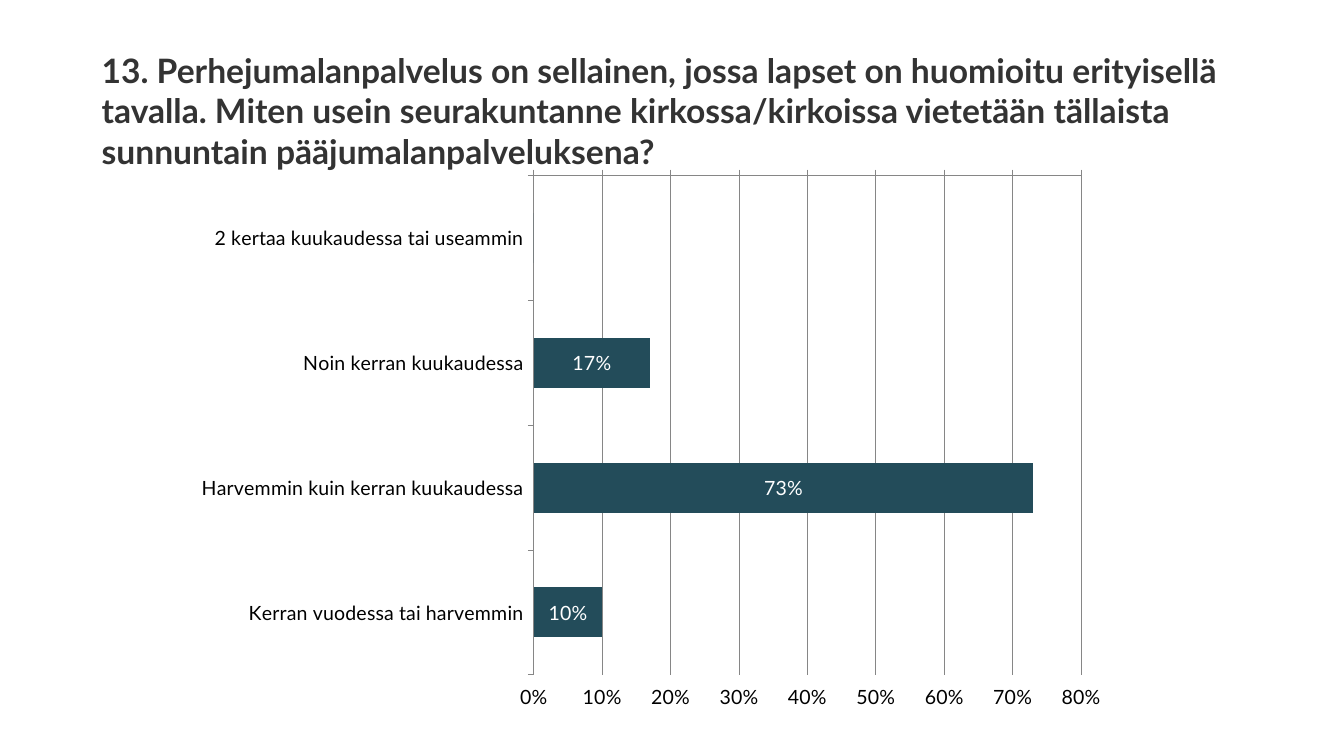
from lxml.etree import SubElement
from pptx import Presentation
from pptx.chart.data import CategoryChartData
from pptx.dml.color import RGBColor
from pptx.enum.chart import XL_CHART_TYPE, XL_LABEL_POSITION, XL_TICK_LABEL_POSITION, XL_TICK_MARK
from pptx.enum.text import MSO_ANCHOR
from pptx.oxml.ns import qn
from pptx.util import Inches, Pt

FONT = "Lato"
HEADING = RGBColor(0x33, 0x33, 0x33)
BLACK = RGBColor(0, 0, 0)
WHITE = RGBColor(0xFF, 0xFF, 0xFF)
TEAL = RGBColor(0x23, 0x4C, 0x5A)
GRID = RGBColor(0x86, 0x86, 0x86)

ANSWERS = {
    "2 kertaa kuukaudessa tai useammin": 0,
    "Noin kerran kuukaudessa": 0.17,
    "Harvemmin kuin kerran kuukaudessa": 0.73,
    "Kerran vuodessa tai harvemmin": 0.1,
}

prs = Presentation()
prs.slide_width, prs.slide_height = Inches(13.33), Inches(7.5)
slide = prs.slides.add_slide(prs.slide_layouts[6])

# Question
question = slide.shapes.add_textbox(Inches(0.91), Inches(0.44), Inches(11.34), Inches(1.31)).text_frame
question.word_wrap = True
question.vertical_anchor = MSO_ANCHOR.MIDDLE
question.text = (
    "13. Perhejumalanpalvelus on sellainen, jossa lapset on huomioitu erityisellä tavalla. "
    "Miten usein seurakuntanne kirkossa/kirkoissa vietetään tällaista "
    "sunnuntain pääjumalanpalveluksena?"
)
heading_font = question.paragraphs[0].font
heading_font.name, heading_font.size, heading_font.bold = FONT, Pt(24), True
heading_font.color.rgb = HEADING

# Share of each answer
shares = CategoryChartData(number_format="0%")
shares.categories = list(ANSWERS)
shares.add_series("Series 1", list(ANSWERS.values()))
chart = slide.shapes.add_chart(
    XL_CHART_TYPE.BAR_CLUSTERED, Inches(2), Inches(1.52), Inches(9.03), Inches(5.56), shares
).chart
chart.has_title = chart.has_legend = False
chart.font.name, chart.font.size = FONT, Pt(14)
chart.font.color.rgb = BLACK

# Bars and labels; the number format hides the zero
bars = chart.plots[0]
bars.gap_width = 150
bars.vary_by_categories = False
bars.series[0].format.fill.solid()
bars.series[0].format.fill.fore_color.rgb = TEAL
bars.has_data_labels = True
labels = bars.data_labels
labels.show_value = True
labels.number_format, labels.number_format_is_linked = "0%;;", False
labels.position = XL_LABEL_POSITION.CENTER
labels.font.name, labels.font.size = FONT, Pt(14)
labels.font.color.rgb = WHITE

# Axes: answers run downwards, percentages stay at the bottom
answer_axis, share_axis = chart.category_axis, chart.value_axis
answer_axis.reverse_order = True
answer_axis.tick_label_position = XL_TICK_LABEL_POSITION.LOW
share_axis.tick_label_position = XL_TICK_LABEL_POSITION.HIGH
share_axis.minimum_scale, share_axis.maximum_scale, share_axis.major_unit = 0, 0.8, 0.1
share_axis.tick_labels.number_format = "0%"
share_axis.tick_labels.number_format_is_linked = False
share_axis.has_major_gridlines = True
for axis in (answer_axis, share_axis):
    axis.major_tick_mark = XL_TICK_MARK.OUTSIDE
    axis.minor_tick_mark = XL_TICK_MARK.NONE
for line in (answer_axis.format.line, share_axis.format.line, share_axis.major_gridlines.format.line):
    line.color.rgb = GRID
    line.width = Pt(0.75)

# Inner plot area as shares of the chart
plot_area = chart.element.find(".//" + qn("c:plotArea"))
for automatic in plot_area.findall(qn("c:layout")):
    plot_area.remove(automatic)
layout = SubElement(plot_area, qn("c:layout"))
plot_area.insert(0, layout)
manual = SubElement(layout, qn("c:manualLayout"))
for tag, value in (
    ("layoutTarget", "inner"), ("xMode", "edge"), ("yMode", "edge"),
    ("x", "0.363"), ("y", "0.04"), ("w", "0.603"), ("h", "0.891"),
):
    SubElement(manual, qn("c:" + tag)).set("val", value)

prs.save("out.pptx")
